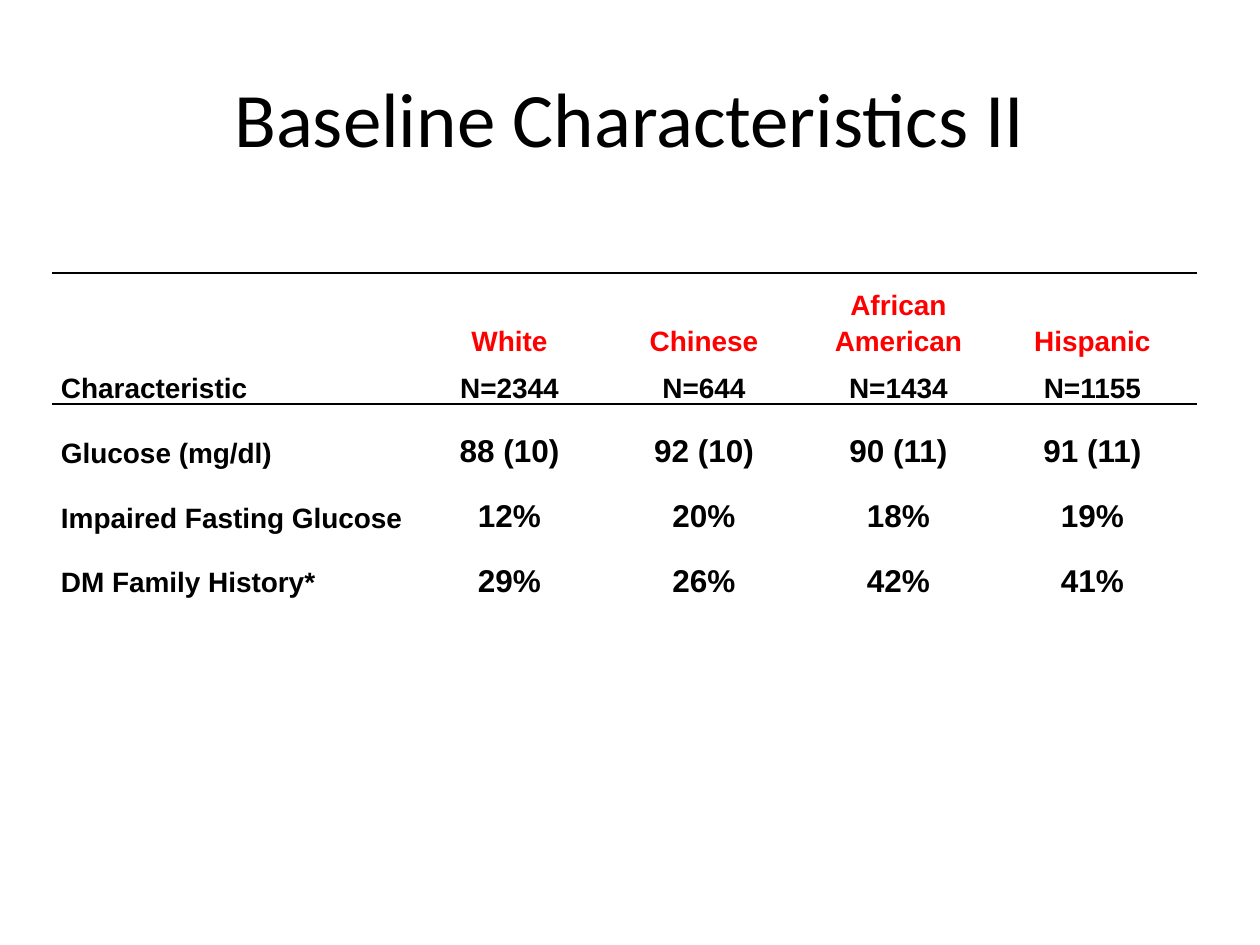
from dataclasses import dataclass

from lxml import etree
from pptx import Presentation
from pptx.dml.color import RGBColor
from pptx.enum.text import MSO_ANCHOR, PP_ALIGN
from pptx.oxml.ns import qn
from pptx.util import Pt

EMU_PER_PX = 914400 / 126
BLANK_LAYOUT = 6
LEFT, CENTER = PP_ALIGN.LEFT, PP_ALIGN.CENTER
MIDDLE, BOTTOM = MSO_ANCHOR.MIDDLE, MSO_ANCHOR.BOTTOM

COLUMN_WIDTHS = [368, 179, 210, 179, 209]
ROW_HEIGHTS = [84, 47, 65, 65, 65]
HEADER_ROWS = 2
ROWS = [
    ["", "White", "Chinese", "African American", "Hispanic"],
    ["Characteristic", "N=2344", "N=644", "N=1434", "N=1155"],
    ["Glucose (mg/dl)", "88 (10)", "92 (10)", "90 (11)", "91 (11)"],
    ["Impaired Fasting Glucose", "12%", "20%", "18%", "19%"],
    ["DM Family History*", "29%", "26%", "42%", "41%"],
]


@dataclass(frozen=True)
class Theme:
    title_font: str = "Calibri"
    table_font: str = "Arial"
    ink: str = "000000"
    group: str = "FF0000"
    title_size: int = 44
    label_size: int = 16
    value_size: int = 18
    rule_width: int = 1
    line_spacing: float = 1.15


def px(length):
    return round(length * EMU_PER_PX)


class SlideBuilder:
    def __init__(self, slide, theme):
        self.slide = slide
        self.theme = theme

    def format_paragraph(self, paragraph, font_name, size, color, bold, alignment):
        paragraph.alignment = alignment
        font = paragraph.font
        for run in paragraph.runs or [paragraph]:
            font = run.font
            font.name = font_name
            font.size = Pt(size)
            font.bold = bold
            font.color.rgb = RGBColor.from_string(color)

    def title(self, text, left, top, width, height):
        shape = self.slide.shapes.add_textbox(px(left), px(top), px(width), px(height))
        text_frame = shape.text_frame
        text_frame.word_wrap = True
        text_frame.vertical_anchor = MIDDLE
        text_frame.text = text
        self.format_paragraph(text_frame.paragraphs[0], self.theme.title_font,
                              self.theme.title_size, self.theme.ink, False, CENTER)

    def border(self, cell, side, visible):
        properties = cell._tc.get_or_add_tcPr()
        line = etree.SubElement(properties, qn(f"a:ln{side}"))
        if visible:
            line.set("w", str(Pt(self.theme.rule_width)))
            fill = etree.SubElement(line, qn("a:solidFill"))
            etree.SubElement(fill, qn("a:srgbClr"), val=self.theme.ink)
        else:
            etree.SubElement(line, qn("a:noFill"))

    def cell(self, cell, text, row, column):
        cell.margin_left = cell.margin_right = px(9)
        cell.margin_top = cell.margin_bottom = 0
        cell.vertical_anchor = BOTTOM
        ruled_sides = {
            "L": False,
            "R": False,
            "T": row in (0, HEADER_ROWS),
            "B": row == HEADER_ROWS - 1,
        }
        for side, visible in ruled_sides.items():
            self.border(cell, side, visible)
        cell.fill.background()
        cell.text_frame.text = text
        paragraph = cell.text_frame.paragraphs[0]
        paragraph.line_spacing = self.theme.line_spacing
        is_label = column == 0 or row < HEADER_ROWS
        size = self.theme.label_size if is_label else self.theme.value_size
        color = self.theme.group if row == 0 else self.theme.ink
        alignment = LEFT if column == 0 else CENTER
        self.format_paragraph(paragraph, self.theme.table_font, size, color, True, alignment)

    def table(self, rows, left, top, column_widths, row_heights):
        frame = self.slide.shapes.add_table(
            len(rows), len(column_widths), px(left), px(top),
            px(sum(column_widths)), px(sum(row_heights)))
        table = frame.table
        table.first_row = False
        table.horz_banding = False
        for column, width in zip(table.columns, column_widths):
            column.width = px(width)
        for row, height in zip(table.rows, row_heights):
            row.height = px(height)
        for row, texts in enumerate(rows):
            for column, text in enumerate(texts):
                self.cell(table.cell(row, column), text, row, column)


def main():
    presentation = Presentation()
    presentation.slide_width = px(1260)
    presentation.slide_height = px(945)
    slide = presentation.slides.add_slide(presentation.slide_layouts[BLANK_LAYOUT])
    builder = SlideBuilder(slide, Theme())
    builder.title("Baseline Characteristics II", 63, 38, 1134, 158)
    builder.table(ROWS, 52, 273, COLUMN_WIDTHS, ROW_HEIGHTS)
    presentation.save("out.pptx")


if __name__ == "__main__":
    main()
